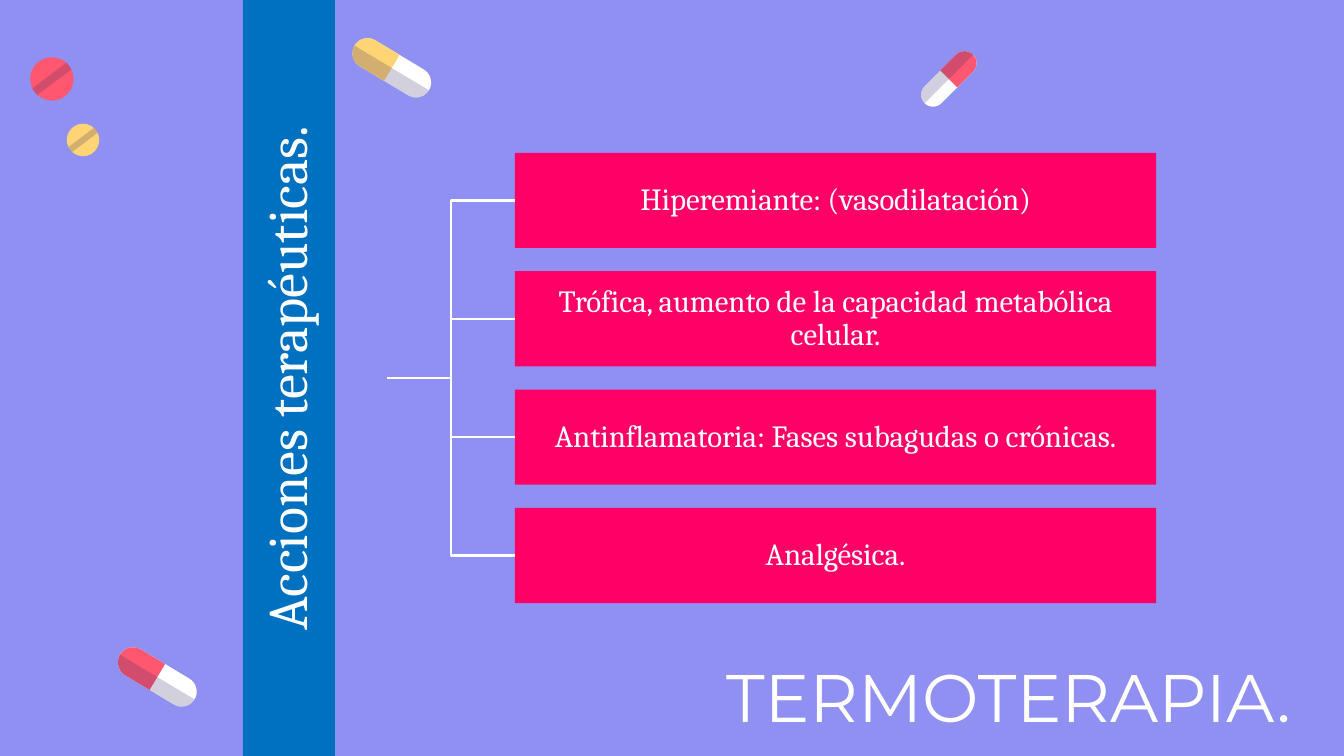
from math import cos, radians, sin

from lxml import etree
from pptx import Presentation
from pptx import util as u
from pptx.dml import color
from pptx.enum import shapes, text
from pptx.oxml import ns

Pt = u.Pt
COLORS = {
    "lavender": "9090F3",
    "blue": "0070C0",
    "pink": "FF0066",
    "white": "FFFFFF",
    "coral": "FF576F",
    "yellow": "FFD474",
    "shade": "332A68",
}
ACTIONS = [
    "Hiperemiante: (vasodilatación)",
    "Trófica, aumento de la capacidad metabólica celular.",
    "Antinflamatoria: Fases subagudas o crónicas.",
    "Analgésica.",
]


def rgb(name):
    return color.RGBColor.from_string(COLORS[name])


def paint(shape, fill, alpha=None):
    shape.shadow.inherit = False
    shape.fill.solid()
    shape.fill.fore_color.rgb = rgb(fill)
    shape.line.fill.background()
    if alpha is not None:
        tint = shape.fill._xPr.find(ns.qn("a:solidFill"))[0]
        etree.SubElement(tint, ns.qn("a:alpha"), val=str(alpha * 1000))


def write(shape, words, font, size, inset, anchor, spacing=None):
    frame = shape.text_frame
    frame.word_wrap = True
    frame.vertical_anchor = anchor
    frame.margin_left = frame.margin_right = Pt(inset[0])
    frame.margin_top = frame.margin_bottom = Pt(inset[1])
    frame.text = words
    paragraph = frame.paragraphs[0]
    paragraph.alignment = text.PP_ALIGN.CENTER
    paragraph.line_spacing = spacing
    paragraph.font.name = font
    paragraph.font.size = Pt(size)
    paragraph.font.color.rgb = rgb("white")


def arc(centre, radius, start, end, steps=16):
    angles = [radians(start + (end - start) * i / steps) for i in range(steps + 1)]
    return [(centre + radius * cos(a), radius * sin(a)) for a in angles]


def add_outline(slide, centre, angle, points, fill, alpha=None):
    x, y = centre
    c, s = cos(radians(angle)), sin(radians(angle))
    placed = [(Pt(x + a * c - b * s), Pt(y + a * s + b * c)) for a, b in points]
    builder = slide.shapes.build_freeform(*placed[0])
    builder.add_line_segments(placed[1:])
    paint(builder.convert_to_shape(), fill, alpha)


def add_tablet(slide, centre, diameter, fill):
    x, y = centre
    radius = diameter / 2
    disc = slide.shapes.add_shape(
        shapes.MSO_SHAPE.OVAL, Pt(x - radius), Pt(y - radius), Pt(diameter), Pt(diameter))
    paint(disc, fill)
    groove = arc(0, radius, -11, 11) + arc(0, radius, 169, 191)
    add_outline(slide, centre, -37, groove, "shade", 22)


def add_capsule(slide, centre, radius, angle, fill):
    half = radius * 1.87
    tinted_end = arc(-half, radius, 90, 270)
    body = arc(half, radius, -90, 90) + tinted_end
    tinted_half = tinted_end + [(0, -radius), (0, radius)]
    shaded_side = arc(half, radius, 0, 90) + arc(-half, radius, 90, 180)
    add_outline(slide, centre, angle, body, "white")
    add_outline(slide, centre, angle, tinted_half, fill)
    add_outline(slide, centre, angle, shaded_side, "shade", 22)


def add_pills(slide):
    add_tablet(slide, (27.8, 42.3), 23.2, "coral")
    add_tablet(slide, (44.5, 75), 17.4, "yellow")
    add_capsule(slide, (84.3, 362.7), 8.1, 31, "coral")
    add_capsule(slide, (508.3, 42.3), 6.4, 135, "coral")
    add_capsule(slide, (209.9, 36.4), 8.1, 31, "yellow")


def add_title(slide, left, top, width, height):
    title = slide.shapes.add_textbox(Pt(left), Pt(top), Pt(width), Pt(height))
    write(title, "TERMOTERAPIA.", "Montserrat", 36, (5, 3), text.MSO_ANCHOR.BOTTOM)


def add_band(slide, left, top, width, height):
    band = slide.shapes.add_shape(
        shapes.MSO_SHAPE.RECTANGLE,
        Pt(left + (width - height) / 2), Pt(top + (height - width) / 2),
        Pt(height), Pt(width))
    band.rotation = 270
    paint(band, "blue")
    write(band, "Acciones terapéuticas.", "Cambria", 30, (1.5, 1.5),
          text.MSO_ANCHOR.MIDDLE, 0.9)


def add_actions(slide, left, top, width, height):
    branch_width = 68.4
    row_height = 51
    pitch = (height - row_height) / (len(ACTIONS) - 1)
    row_left = left + branch_width
    for i, words in enumerate(ACTIONS):
        row_top = top + i * pitch
        row = slide.shapes.add_shape(
            shapes.MSO_SHAPE.RECTANGLE, Pt(row_left), Pt(row_top),
            Pt(width - branch_width), Pt(row_height))
        paint(row, "pink")
        write(row, words, "Cambria", 16.5, (0.8, 0.8), text.MSO_ANCHOR.MIDDLE, 0.9)
        branch = slide.shapes.add_connector(
            shapes.MSO_CONNECTOR.ELBOW, Pt(left), Pt(top + height / 2),
            Pt(row_left), Pt(row_top + row_height / 2))
        branch.end_connect(row, 1)
        branch.line.color.rgb = rgb("white")
        branch.line.width = Pt(1.25)
        etree.SubElement(branch._element.spPr, ns.qn("a:effectLst"))


def main():
    deck = Presentation()
    deck.slide_width, deck.slide_height = Pt(720), Pt(405)
    slide = deck.slides.add_slide(deck.slide_layouts[6])
    slide.background.fill.solid()
    slide.background.fill.fore_color.rgb = rgb("lavender")
    add_pills(slide)
    add_title(slide, 332.6, 221.8, 415.4, 175.7)
    add_band(slide, 130.2, 0, 49.2, 405)
    add_actions(slide, 207.4, 81.9, 412, 241.2)
    deck.save("out.pptx")


if __name__ == "__main__":
    main()
